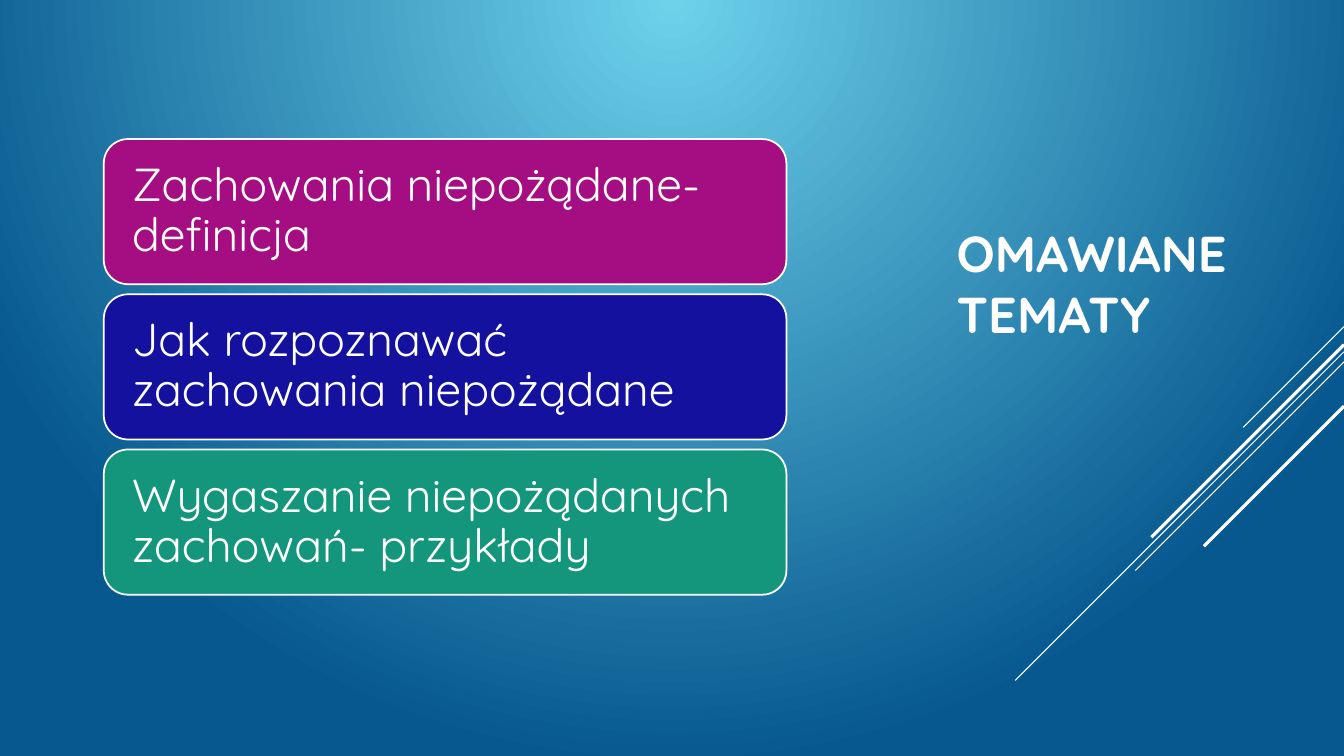
from lxml.etree import SubElement
from pptx import Presentation
from pptx.dml.color import RGBColor
from pptx.enum.shapes import MSO_CONNECTOR, MSO_SHAPE
from pptx.enum.text import MSO_ANCHOR, PP_ALIGN
from pptx.oxml.ns import qn
from pptx.util import Inches, Pt

WHITE = RGBColor(0xFF, 0xFF, 0xFF)
SKY = RGBColor(0x6E, 0xD2, 0xEB)
DEEP_BLUE = RGBColor(0x06, 0x58, 0x8E)
PURPLE = RGBColor(0xA5, 0x0E, 0x82)
NAVY = RGBColor(0x13, 0x11, 0x9D)
GREEN = RGBColor(0x14, 0x96, 0x7C)

FONT = "Quicksand"
SLIDE_WIDTH, SLIDE_HEIGHT = 13.33, 7.5

TOPICS = [
    ("Zachowania niepożądane- definicja", PURPLE),
    ("Jak rozpoznawać zachowania niepożądane", NAVY),
    ("Wygaszanie niepożądanych zachowań- przykłady", GREEN),
]

# Diagonals at 45 degrees: height on the right edge, run, line width
DIAGONALS = [
    (3.24, 1.0, 0.75),
    (3.49, 3.26, 0.75),
    (3.59, 2.07, 0.75),
    (3.42, 1.91, 2.25),
    (4.03, 1.39, 2.25),
]


def paint_background(slide):
    """Radial gradient that spreads from the middle of the top edge."""
    fill = slide.background.fill
    fill.gradient()
    for stop, color in zip(fill.gradient_stops, (SKY, DEEP_BLUE)):
        stop.color.rgb = color
    linear = next(slide.element.iter(qn("a:lin")))
    gradient = linear.getparent()
    gradient.remove(linear)
    circle = SubElement(gradient, qn("a:path"))
    circle.set("path", "circle")
    SubElement(circle, qn("a:fillToRect")).set("b", "100000")


def draw_diagonals(slide, right):
    for top, run, width in DIAGONALS:
        line = slide.shapes.add_connector(
            MSO_CONNECTOR.STRAIGHT,
            Inches(right), Inches(top), Inches(right - run), Inches(top + run))
        line.line.color.rgb = WHITE
        line.line.width = Pt(width)
        SubElement(line.element.spPr, qn("a:effectLst"))


def write_text(shape, text, size, inset_x, inset_y, bold=False):
    frame = shape.text_frame
    frame.text = text
    frame.word_wrap = True
    frame.vertical_anchor = MSO_ANCHOR.MIDDLE
    frame.margin_left = frame.margin_right = Inches(inset_x)
    frame.margin_top = frame.margin_bottom = Inches(inset_y)
    para = frame.paragraphs[0]
    para.alignment = PP_ALIGN.LEFT
    font = para.runs[0].font
    font.name, font.size, font.bold = FONT, Pt(size), bold
    font.color.rgb = WHITE
    return para


def draw_title(slide, left, top, width, height):
    box = slide.shapes.add_textbox(
        Inches(left), Inches(top), Inches(width), Inches(height))
    write_text(box, "OMAWIANE TEMATY", 36, 0.1, 0.05, bold=True)


def draw_topics(slide, left, top, width, height, gap=0.1):
    """Stack of equal cards that fills the given box."""
    card_height = (height - gap * (len(TOPICS) - 1)) / len(TOPICS)
    for row, (topic, color) in enumerate(TOPICS):
        card = slide.shapes.add_shape(
            MSO_SHAPE.ROUNDED_RECTANGLE,
            Inches(left), Inches(top + row * (card_height + gap)),
            Inches(width), Inches(card_height))
        card.shadow.inherit = False
        card.fill.solid()
        card.fill.fore_color.rgb = color
        card.line.color.rgb = WHITE
        card.line.width = Pt(1.25)
        para = write_text(card, topic, 33, 0.21, 0.21)
        para.line_spacing = 0.9


def main():
    deck = Presentation()
    deck.slide_width, deck.slide_height = Inches(SLIDE_WIDTH), Inches(SLIDE_HEIGHT)
    slide = deck.slides.add_slide(deck.slide_layouts[6])
    paint_background(slide)
    draw_diagonals(slide, SLIDE_WIDTH)
    draw_title(slide, 9.39, 1.03, 3.33, 3.55)
    draw_topics(slide, 1.03, 1.38, 6.77, 4.52)
    deck.save("out.pptx")


if __name__ == "__main__":
    main()
